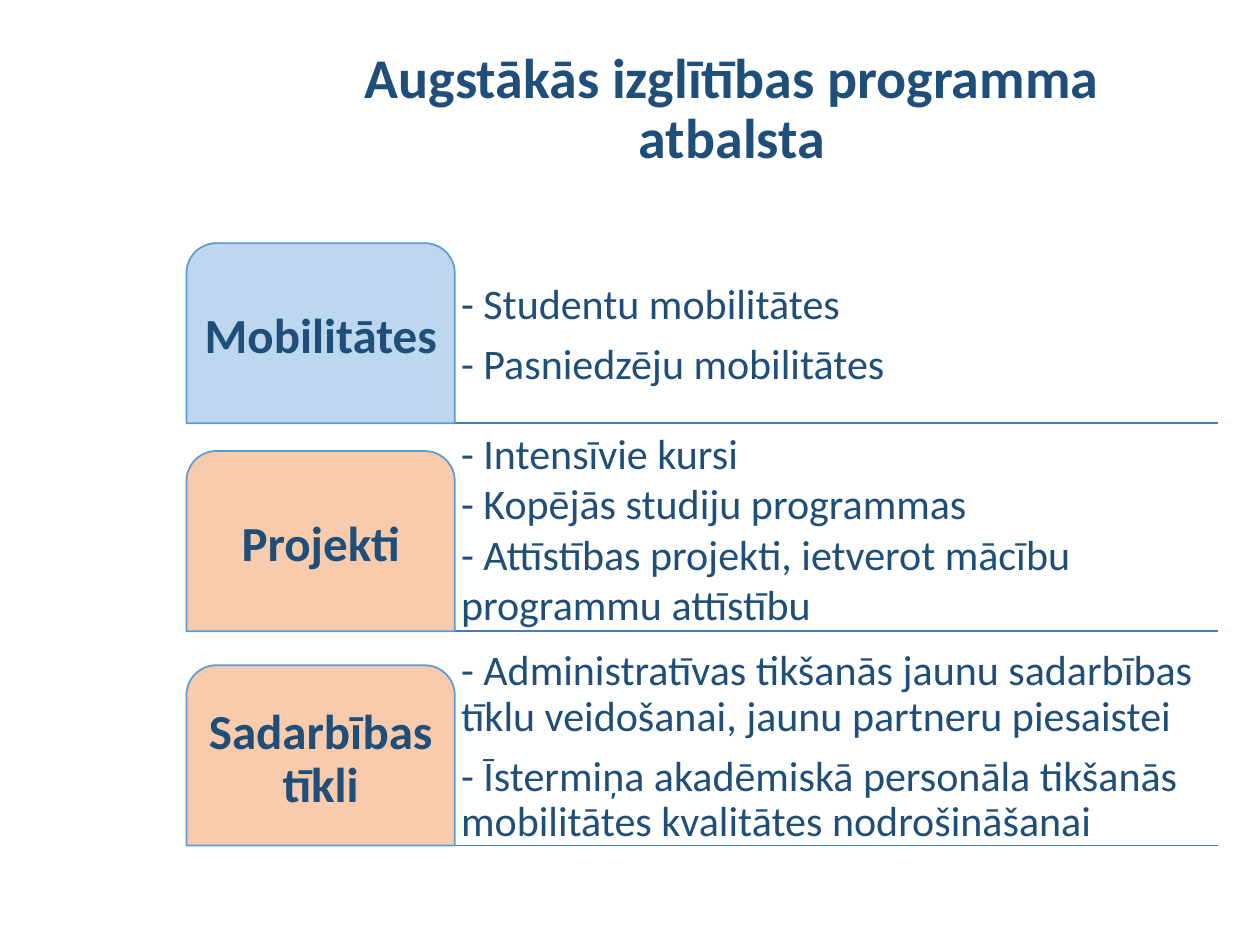
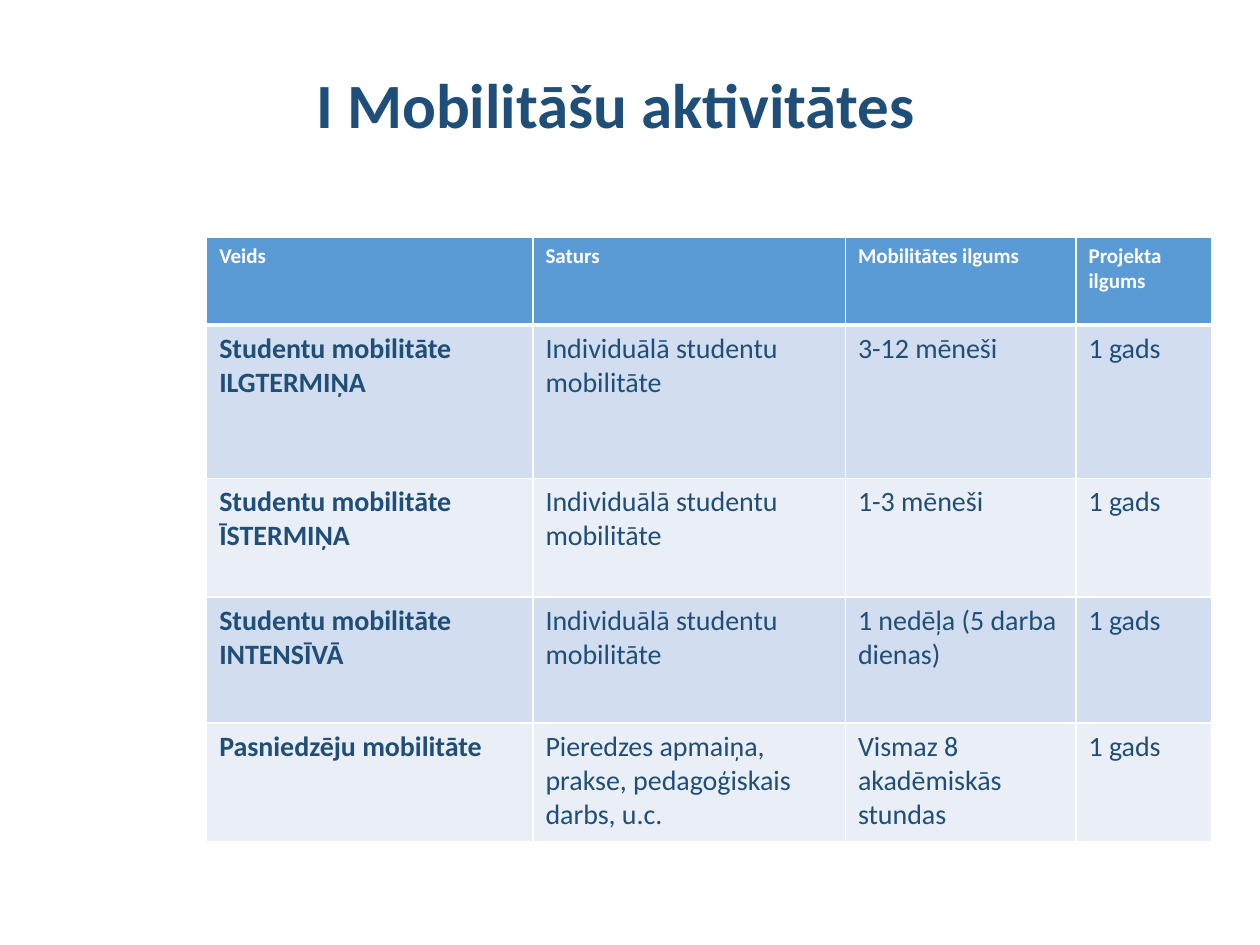
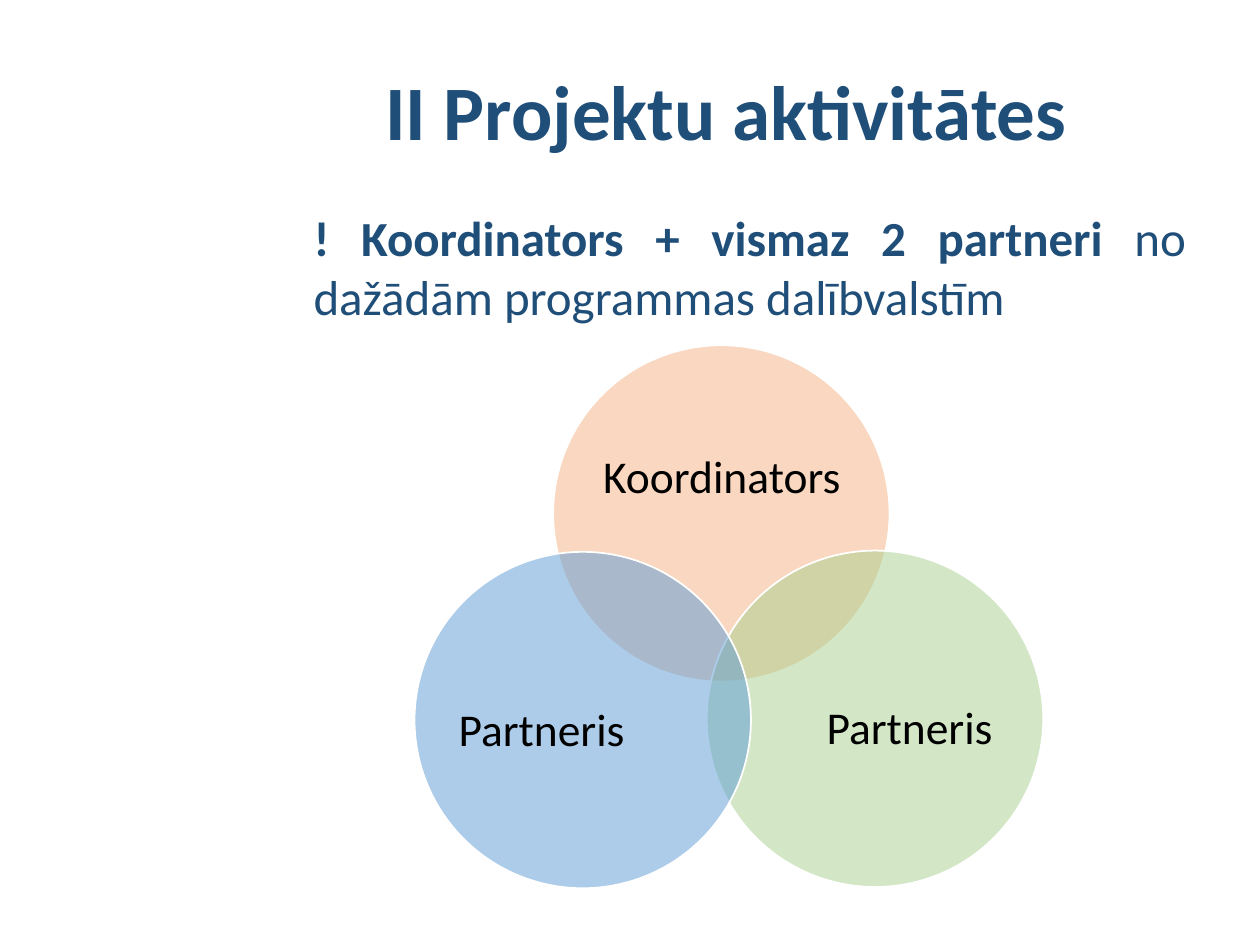
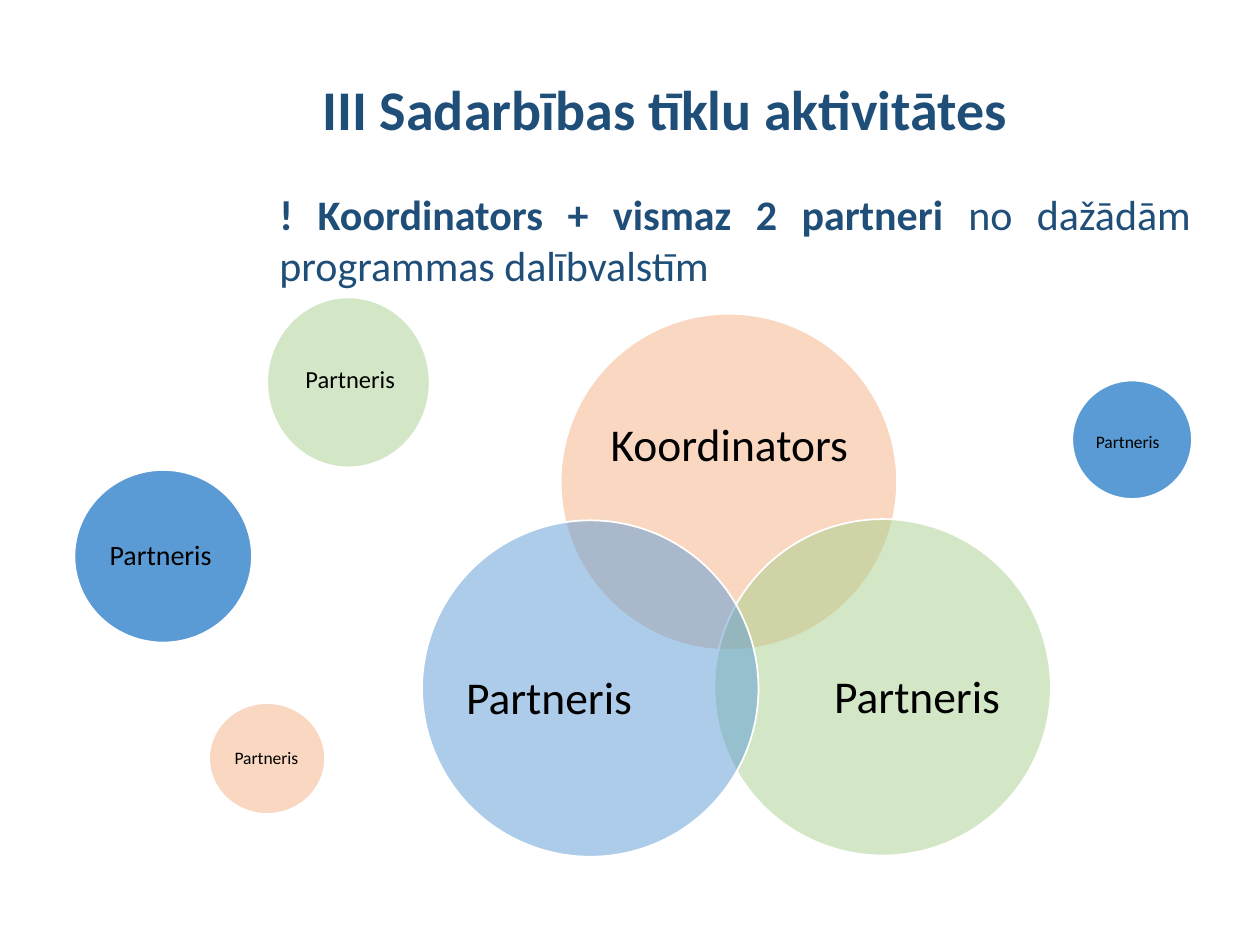
from dataclasses import dataclass
from typing import Any, Optional

import lxml.etree
import pptx
import pptx.dml.color
import pptx.enum.shapes
import pptx.enum.text
import pptx.oxml.ns
import pptx.util

Inches = pptx.util.Inches
Pt = pptx.util.Pt
Align = pptx.enum.text.PP_ALIGN
Anchor = pptx.enum.text.MSO_ANCHOR
Preset = pptx.enum.shapes.MSO_SHAPE
qn = pptx.oxml.ns.qn

FONT = "Calibri"
COLORS = {
    "navy": "1F4E79",
    "blue": "5B9BD5",
    "pale_blue": "BDD7EE",
    "peach": "F8CBAD",
    "orange": "F4B183",
    "green": "A9D18E",
    "rule": "497CAB",
    "band_dark": "D2DEEF",
    "band_light": "EAEFF7",
    "white": "FFFFFF",
    "black": "000000",
}


@dataclass(frozen=True)
class Rect:
    left: float
    top: float
    width: float
    height: float

    def shifted(self, right: float, down: float) -> "Rect":
        return Rect(self.left + right, self.top + down, self.width, self.height)

    def lengths(self) -> tuple:
        return tuple(Inches(v) for v in (self.left, self.top, self.width, self.height))


@dataclass(frozen=True)
class Span:
    text: str
    size: float
    color: str = "navy"
    bold: bool = False


@dataclass(frozen=True)
class ParaStyle:
    align: Any = Align.LEFT
    spacing: float = 1.0
    after: float = 0  # share of the font size


@dataclass(frozen=True)
class SupportRow:
    """A labelled tab standing on a rule, with its list to the right."""
    top: float
    label: str
    fill: str
    list_top: float
    list_height: float
    items: tuple
    style: ParaStyle


@dataclass(frozen=True)
class Circle:
    """A disc; its label area is measured from the disc's top left corner."""
    area: Rect
    color: str
    label_area: Rect
    spans: tuple
    alpha: Optional[int] = 50


PLAIN = ParaStyle()
JUSTIFIED = ParaStyle(Align.JUSTIFY)
TIGHT_LIST = ParaStyle(spacing=0.9, after=0.35)
TIGHT_CENTER = ParaStyle(Align.CENTER, 0.9, 0.35)

TAB_LEFT, TAB_WIDTH, TAB_HEIGHT, TAB_PAD = 1.48, 2.13, 1.43, 0.07
LIST_LEFT, LIST_WIDTH = 3.61, 6.06

SUPPORT_ROWS = (
    SupportRow(1.93, "Mobilitātes", "pale_blue", 2.17, 0.96,
               ("- Studentu mobilitātes", "- Pasniedzēju mobilitātes"), TIGHT_LIST),
    SupportRow(3.58, "Projekti", "peach", 3.32, 1.72,
               ("- Intensīvie kursi", "- Kopējās studiju programmas",
                "- Attīstības projekti, ietverot mācību programmu attīstību"), PLAIN),
    SupportRow(5.28, "Sadarbības tīkli", "peach", 5.23, 1.53,
               ("- Administratīvas tikšanās jaunu sadarbības tīklu veidošanai, "
                "jaunu partneru piesaistei",
                "- Īstermiņa akadēmiskā personāla tikšanās mobilitātes kvalitātes "
                "nodrošināšanai"), TIGHT_LIST),
)

TABLE_AREA = Rect(1.64, 1.88, 7.98, 4.8)
COLUMN_WIDTHS = (2.59, 2.48, 1.83, 1.08)
ROW_HEIGHTS = (0.7, 1.22, 0.94, 1, 0.94)
STUDENT_CONTENT = "Individuālā studentu mobilitāte"
MOBILITY_ROWS = (
    ("Veids", "Saturs", "Mobilitātes ilgums", "Projekta ilgums"),
    ("Studentu mobilitāte\nILGTERMIŅA", STUDENT_CONTENT, "3-12 mēneši", "1 gads"),
    ("Studentu mobilitāte\nĪSTERMIŅA", STUDENT_CONTENT, "1-3 mēneši", "1 gads"),
    ("Studentu mobilitāte\nINTENSĪVĀ", STUDENT_CONTENT, "1 nedēļa (5 darba dienas)",
     "1 gads"),
    ("Pasniedzēju mobilitāte", "Pieredzes apmaiņa, prakse, pedagoģiskais darbs, u.c.",
     "Vismaz 8 akadēmiskās stundas", "1 gads"),
)


def label(text: str, size: float) -> Span:
    return Span(text, size, "black")


DISC = 2.67
VENN = (
    Circle(Rect(1.1, 0, DISC, DISC), "orange", Rect(0.36, 0.46, 1.96, 1.2),
           (label("Koordinators", 26),)),
    Circle(Rect(2.32, 1.63, DISC, DISC), "green", Rect(0.81, 0.69, 1.6, 1.47),
           (label("Partneris", 26),)),
    Circle(Rect(0, 1.64, DISC, DISC), "blue", Rect(0.25, 0.69, 1.6, 1.47),
           (label("Partneris ", 26),)),
)
OUTER_PARTNERS = (
    Circle(Rect(0.59, 3.73, 1.41, 1.37), "blue", Rect(0.26, 0.31, 0.85, 0.76),
           (label("Partneris ", 16),), alpha=None),
    Circle(Rect(2.12, 2.36, 1.29, 1.35), "green", Rect(0.27, 0.29, 0.78, 0.74),
           (label("Partneris", 14),)),
    Circle(Rect(1.66, 5.58, 0.92, 0.88), "orange", Rect(0.12, 0.24, 0.67, 0.4),
           (label("Partneris", 10),)),
    Circle(Rect(8.51, 3.02, 0.95, 0.94), "blue", Rect(0.18, 0.21, 0.57, 0.52),
           (label("Partneris", 10), label(" ", 16)), alpha=None),
)


def rgb(name: str) -> pptx.dml.color.RGBColor:
    return pptx.dml.color.RGBColor.from_string(COLORS[name])


def write_text(frame: Any, paras: list, style: ParaStyle = PLAIN) -> None:
    """Fill a text frame; each paragraph is a sequence of spans."""
    for index, spans in enumerate(paras):
        para = frame.paragraphs[0] if index == 0 else frame.add_paragraph()
        para.alignment = style.align
        para.line_spacing = style.spacing
        para.space_after = Pt(style.after * spans[0].size)
        for span in spans:
            run = para.add_run()
            run.text = span.text
            run.font.name = FONT
            run.font.size = Pt(span.size)
            run.font.bold = span.bold
            run.font.color.rgb = rgb(span.color)


def add_text(shapes: Any, area: Rect, paras: list, style: ParaStyle,
             anchor: Any = Anchor.TOP, inset: Optional[float] = None) -> None:
    frame = shapes.add_textbox(*area.lengths()).text_frame
    frame.word_wrap = True
    frame.vertical_anchor = anchor
    if inset is not None:
        frame.margin_left = frame.margin_right = Inches(inset)
        frame.margin_top = frame.margin_bottom = Inches(inset)
    write_text(frame, paras, style)


def add_filled(shapes: Any, preset: Any, area: Rect, fill: str, line: str) -> Any:
    shape = shapes.add_shape(preset, *area.lengths())
    shape.shadow.inherit = False
    shape.fill.solid()
    shape.fill.fore_color.rgb = rgb(fill)
    shape.line.color.rgb = rgb(line)
    shape.line.width = Pt(1)
    return shape


def add_titled_page(deck: Any, text: str, area: Rect, size: float,
                    align: Any = Align.CENTER) -> Any:
    page = deck.slides.add_slide(deck.slide_layouts.get_by_name("Title Only"))
    title = page.shapes.title
    title.left, title.top, title.width, title.height = area.lengths()
    frame = title.text_frame
    frame.word_wrap = True
    frame.auto_size = pptx.enum.text.MSO_AUTO_SIZE.NONE
    frame.vertical_anchor = Anchor.MIDDLE
    write_text(frame, [[Span(text, size, bold=True)]], ParaStyle(align, 0.9))
    return page


def add_rule(shapes: Any, left: float, right: float, y: float) -> None:
    rule = shapes.add_connector(pptx.enum.shapes.MSO_CONNECTOR.STRAIGHT,
                                Inches(left), Inches(y), Inches(right), Inches(y))
    rule.line.color.rgb = rgb("rule")
    rule.line.width = Pt(1)
    lxml.etree.SubElement(rule.element.spPr, qn("a:effectLst"))


def add_support_row(shapes: Any, row: SupportRow) -> None:
    add_rule(shapes, TAB_LEFT, LIST_LEFT + LIST_WIDTH, row.top + TAB_HEIGHT)
    add_text(shapes, Rect(LIST_LEFT, row.list_top, LIST_WIDTH, row.list_height),
             [[Span(item, 24)] for item in row.items], row.style, Anchor.BOTTOM, 0.05)
    tab = add_filled(shapes, Preset.ROUND_2_SAME_RECTANGLE,
                     Rect(TAB_LEFT, row.top, TAB_WIDTH, TAB_HEIGHT), row.fill, "blue")
    tab.adjustments[0], tab.adjustments[1] = 0.167, 0
    add_text(shapes, Rect(TAB_LEFT + TAB_PAD, row.top + TAB_PAD,
                          TAB_WIDTH - 2 * TAB_PAD, TAB_HEIGHT - TAB_PAD),
             [[Span(row.label, 28, bold=True)]], TIGHT_CENTER, Anchor.MIDDLE, 0.06)


def add_circle(shapes: Any, circle: Circle, left: float = 0, top: float = 0) -> None:
    area = circle.area.shifted(left, top)
    disc = add_filled(shapes, Preset.OVAL, area, circle.color, "white")
    if circle.alpha is not None:
        color = disc.element.spPr.find(qn("a:solidFill"))[0]
        lxml.etree.SubElement(color, qn("a:alpha"), val=str(circle.alpha * 1000))
    add_text(shapes, circle.label_area.shifted(area.left, area.top), [circle.spans],
             TIGHT_CENTER, Anchor.MIDDLE, 0)


def add_venn(page: Any, left: float, top: float) -> None:
    group = page.shapes.add_group_shape()
    for circle in VENN:
        add_circle(group.shapes, circle, left, top)


def add_partner_rule(page: Any, area: Rect, size: float) -> None:
    add_text(page.shapes, area,
             [[Span("! Koordinators + vismaz 2 partneri ", size, bold=True),
               Span("no dažādām programmas dalībvalstīm", size)]], JUSTIFIED)


def set_borders(cell: Any, top: float, bottom: float) -> None:
    """Give the cell white borders; call before its fill is set."""
    properties = cell._tc.get_or_add_tcPr()
    for side, width in (("L", 1), ("R", 1), ("T", top), ("B", bottom)):
        line = lxml.etree.SubElement(properties, qn(f"a:ln{side}"), w=str(Pt(width)))
        fill = lxml.etree.SubElement(line, qn("a:solidFill"))
        lxml.etree.SubElement(fill, qn("a:srgbClr"), val=COLORS["white"])


def add_mobility_table(page: Any) -> None:
    table = page.shapes.add_table(len(ROW_HEIGHTS), len(COLUMN_WIDTHS),
                                  *TABLE_AREA.lengths()).table
    for column, width in zip(table.columns, COLUMN_WIDTHS):
        column.width = Inches(width)
    for row, height in zip(table.rows, ROW_HEIGHTS):
        row.height = Inches(height)
    for r, texts in enumerate(MOBILITY_ROWS):
        header = r == 0
        band = "blue" if header else ("band_light", "band_dark")[r % 2]
        for c, text in enumerate(texts):
            cell = table.cell(r, c)
            set_borders(cell, 3 if r == 1 else 1, 3 if header else 1)
            cell.fill.solid()
            cell.fill.fore_color.rgb = rgb(band)
            size, color = (12, "white") if header else (16, "navy")
            write_text(cell.text_frame, [[Span(part, size, color, header or c == 0)]
                                         for part in text.split("\n")])


def build_support_page(deck: Any) -> None:
    page = add_titled_page(deck, "Augstākās izglītības programma atbalsta",
                           Rect(2.31, 0.4, 7, 0.95), 32)
    group = page.shapes.add_group_shape()
    for row in SUPPORT_ROWS:
        add_support_row(group.shapes, row)


def build_mobility_page(deck: Any) -> None:
    page = add_titled_page(deck, "I Mobilitāšu aktivitātes",
                           Rect(2.41, 0.4, 6.9, 0.92), 36, Align.LEFT)
    add_mobility_table(page)


def build_project_page(deck: Any) -> None:
    page = add_titled_page(deck, "II Projektu aktivitātes",
                           Rect(2.22, 0.4, 7.09, 1.03), 44)
    add_partner_rule(page, Rect(2.39, 1.6, 7.12, 1.21), 28)
    add_venn(page, 3.29, 2.74)


def build_network_page(deck: Any) -> None:
    page = add_titled_page(deck, "III Sadarbības tīklu aktivitātes",
                           Rect(2.46, 0.4, 6.86, 0.98), 32, Align.LEFT)
    add_partner_rule(page, Rect(2.12, 1.45, 7.43, 0.91), 24)
    add_venn(page, 3.35, 2.49)
    for circle in OUTER_PARTNERS:
        add_circle(page.shapes.add_group_shape().shapes, circle)


def main() -> None:
    deck = pptx.Presentation()
    deck.slide_width, deck.slide_height = Inches(10), Inches(7.5)
    build_support_page(deck)
    build_mobility_page(deck)
    build_project_page(deck)
    build_network_page(deck)
    deck.save("out.pptx")


if __name__ == "__main__":
    main()
